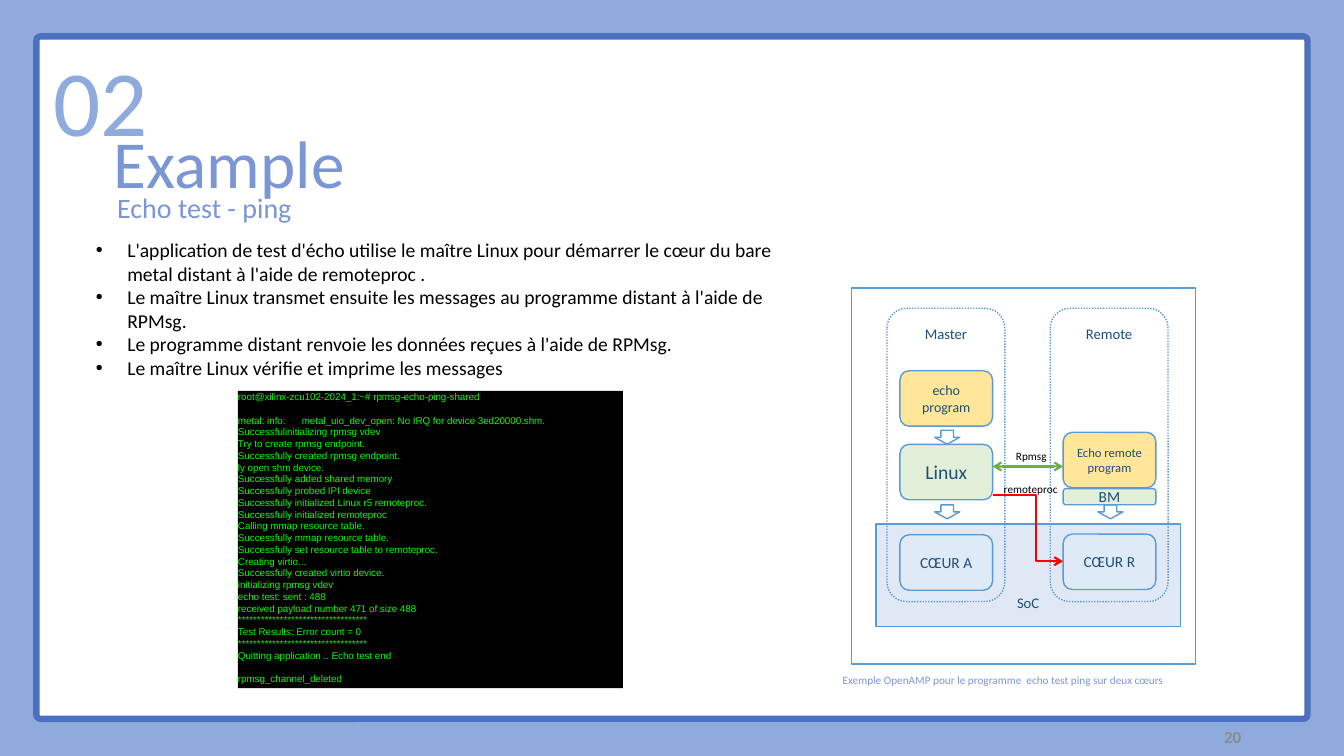
from collections import namedtuple
from dataclasses import dataclass

from lxml.etree import SubElement
from pptx import Presentation
from pptx.dml.color import RGBColor as Color
from pptx.enum.dml import MSO_LINE_DASH_STYLE as Dash
from pptx.enum.shapes import MSO_CONNECTOR as Link, MSO_SHAPE as Preset
from pptx.enum.text import MSO_ANCHOR as Anchor, MSO_AUTO_SIZE as AutoSize, PP_ALIGN as Align
from pptx.oxml.ns import qn
from pptx.util import Pt

Box = namedtuple("Box", "left top width height")
Style = namedtuple("Style", "size color name bold", defaults=("Calibri", False))


@dataclass(frozen=True)
class Theme:
    background: str = "8FAADC"
    frame: str = "4C6FBF"
    white: str = "FFFFFF"
    edge: str = "5B9BD5"
    soc: str = "4472C4"
    program: str = "FFE699"
    system: str = "E2F0D9"
    core: str = "DEEBF7"
    message: str = "70AD47"
    control: str = "FF0000"
    black: str = "000000"
    number: Style = Style(66.6, "8FAADC")
    title: Style = Style(48, "7B96D4")
    subtitle: Style = Style(20, "7B96D4")
    caption: Style = Style(8, "7B96D4")
    body: Style = Style(14, "000000")
    label: Style = Style(8, "000000")
    terminal: Style = Style(7, "00FF00", "Arial")
    page: Style = Style(12, "8B8B8B", "Calibri", True)

    def node(self, size):
        return Style(size, "1F4E79")


THEME = Theme()

BULLETS = [
    "L'application de test d'écho utilise le maître Linux pour démarrer le cœur du bare metal distant à l'aide de remoteproc .",
    "Le maître Linux transmet ensuite les messages au programme distant à l'aide de RPMsg.",
    "Le programme distant renvoie les données reçues à l'aide de RPMsg.",
    "Le maître Linux vérifie et imprime les messages",
]
STARS = "*" * 34
TERMINAL = f"""root@xilinx-zcu102-2024_1:~# rpmsg-echo-ping-shared

metal: info:      metal_uio_dev_open: No IRQ for device 3ed20000.shm.
Successfulinitializing rpmsg vdev
Try to create rpmsg endpoint.
Successfully created rpmsg endpoint.
ly open shm device.
Successfully added shared memory
Successfully probed IPI device
Successfully initialized Linux r5 remoteproc.
Successfully initialized remoteproc
Calling mmap resource table.
Successfully mmap resource table.
Successfully set resource table to remoteproc.
Creating virtio...
Successfully created virtio device.
initializing rpmsg vdev
echo test: sent : 488
received payload number 471 of size 488
{STARS}
Test Results: Error count = 0
{STARS}
Quitting application .. Echo test end

rpmsg_channel_deleted"""


def apply(target, **values):
    for name, value in values.items():
        setattr(target, name, value)


def place(shape, box):
    apply(shape, **{name: Pt(value) for name, value in box._asdict().items()})


def inside(box, left, top, width, height):
    return Box(box.left + left, box.top + top, width, height)


def write(shape, lines, style, margins=(0, 0, 0, 0), anchor=Anchor.TOP, wrap=True,
          align=Align.LEFT, spacing=1.0, bullet_indent=None):
    """Fill a shape with paragraphs; an empty line becomes space before the next one."""
    frame = shape.text_frame
    sides = ("margin_left", "margin_top", "margin_right", "margin_bottom")
    apply(frame, auto_size=AutoSize.NONE, word_wrap=wrap, vertical_anchor=anchor,
          **{side: Pt(margin) for side, margin in zip(sides, margins)})
    gap = 0
    for index, line in enumerate(lines):
        if not line:
            gap = style.size * 1.2
            continue
        paragraph = frame.add_paragraph() if index else frame.paragraphs[0]
        apply(paragraph, alignment=align, line_spacing=spacing, space_before=Pt(gap))
        gap = 0
        if bullet_indent:
            properties = paragraph._p.get_or_add_pPr()
            for name, value in {"marL": bullet_indent, "indent": -bullet_indent}.items():
                properties.set(name, str(Pt(value)))
            SubElement(properties, qn("a:buFont")).set("typeface", "Arial")
            SubElement(properties, qn("a:buChar")).set("char", "•")
        run = paragraph.add_run()
        run.text = line
        apply(run.font, name=style.name, size=Pt(style.size), bold=style.bold)
        run.font.color.rgb = Color.from_string(style.color)


def add_text(slide, box, text, style, **options):
    shape = slide.shapes.add_textbox(*map(Pt, box))
    write(shape, [text], style, **options)


def add_block(slide, preset, box, fill=None, edge=THEME.edge, width=1, dash=None):
    shape = slide.shapes.add_shape(preset, *map(Pt, box))
    shape.shadow.inherit = False
    if fill:
        shape.fill.solid()
        shape.fill.fore_color.rgb = Color.from_string(fill)
    else:
        shape.fill.background()
    if edge:
        shape.line.color.rgb = Color.from_string(edge)
        apply(shape.line, width=Pt(width), dash_style=dash)
    else:
        shape.line.fill.background()
    return shape


def add_arrow(slide, kind, start, end, color, ends):
    connector = slide.shapes.add_connector(kind, *map(Pt, (*start, *end)))
    connector.line.color.rgb = Color.from_string(color)
    connector.line.width = Pt(1.5)
    properties = connector._element.spPr
    for name in ends:
        SubElement(properties.find(qn("a:ln")), qn(f"a:{name}")).set("type", "arrow")
    SubElement(properties, qn("a:effectLst"))
    return connector


def build_frame(slide, box):
    slide.background.fill.solid()
    slide.background.fill.fore_color.rgb = Color.from_string(THEME.background)
    frame = add_block(slide, Preset.ROUNDED_RECTANGLE, box, THEME.white, THEME.frame, 4.5)
    frame.adjustments[0] = 0.006
    # The frame goes behind the placeholders
    slide.shapes.element.insert(2, frame.element)
    add_text(slide, inside(box, 800.5, 493, 60, 15), "20", THEME.page, align=Align.RIGHT)


def build_heading(slide, box):
    add_text(slide, inside(box, 0, 0, 91.4, 102), "02", THEME.number, align=Align.CENTER, spacing=1.27)
    title = slide.shapes.title
    place(title, inside(box, 55.4, 67, 775, 60))
    write(title, ["Example"], THEME.title, spacing=1.18)
    add_text(slide, inside(box, 57.6, 124.2, 361, 27), "Echo test - ping", THEME.subtitle, spacing=1.11)


def build_bullets(slide, box):
    body = slide.placeholders[1]
    place(body, box)
    write(body, BULLETS, THEME.body, margins=(7.2, 3.6, 7.2, 3.6), bullet_indent=22.5)


def build_terminal(slide, box):
    terminal = add_block(slide, Preset.RECTANGLE, box, THEME.black, edge=None)
    write(terminal, TERMINAL.split("\n"), THEME.terminal)


def build_diagram(slide, box):
    add_block(slide, Preset.RECTANGLE, box)
    # System on chip, translucent
    soc = add_block(slide, Preset.RECTANGLE, inside(box, 17.3, 168.5, 217.4, 73.4), THEME.soc)
    tint = soc._element.spPr.find(qn("a:solidFill"))[0]
    SubElement(tint, qn("a:alpha")).set("val", "16000")
    write(soc, ["SoC"], THEME.node(10.5), (0, 0, 0, 11), Anchor.BOTTOM, align=Align.CENTER)
    # Each column: name, left, down arrow tops, nodes (text, top, height, size, fill)
    columns = [
        ("Master", 25.2, (101.5, 154.8), [
            ("echo program", 59, 39.6, 10, THEME.program),
            ("Linux", 111.6, 39.6, 14, THEME.system),
            ("CŒUR A", 176.2, 39.6, 11, THEME.core)]),
        ("Remote", 141.8, (154.8,), [
            ("Echo remote program", 103, 39.6, 9, THEME.program),
            ("CŒUR R", 175.7, 39.6, 11, THEME.core),
            ("BM", 143.3, 11.5, 11, THEME.system)]),
    ]
    for name, left, arrow_tops, nodes in columns:
        column = add_block(slide, Preset.ROUNDED_RECTANGLE, inside(box, left, 14.4, 84.2, 209.5),
                           dash=Dash.ROUND_DOT)
        write(column, [name], THEME.node(10.5), (0, 7.5, 0, 0), align=Align.CENTER)
        for top in arrow_tops:
            add_block(slide, Preset.DOWN_ARROW, inside(box, left + 34, top, 18, 10), THEME.white)
        for text, top, height, size, fill in nodes:
            node = add_block(slide, Preset.ROUNDED_RECTANGLE,
                             inside(box, left + 9.2, top, 66.2, height), fill)
            write(node, [text], THEME.node(size), (7.2, 0, 7.2, 0), Anchor.MIDDLE, align=Align.CENTER)
    # Links between the columns
    start, end = box.left + 100.6, box.left + 151
    add_arrow(slide, Link.STRAIGHT, (start, box.top + 127.4), (end, box.top + 127.4),
              THEME.message, ("headEnd", "tailEnd"))
    bent = add_arrow(slide, Link.ELBOW, (start, box.top + 147.6), (end, box.top + 195.1),
                     THEME.control, ("tailEnd",))
    guide = SubElement(bent._element.spPr.find(qn("a:prstGeom")).find(qn("a:avLst")), qn("a:gd"))
    for name, value in {"name": "adj1", "fmla": "val 61600"}.items():
        guide.set(name, value)
    for text, left, top in (("Rpmsg", 110.2, 111.6), ("remoteproc", 101.5, 135)):
        add_text(slide, inside(box, left, top, 53, 17), text, THEME.label,
                 margins=(7.2, 3.6, 7.2, 3.6), wrap=False)
    add_text(slide, inside(box, -6.5, 274.3, 258.5, 11),
             "Exemple OpenAMP pour le programme  echo test ping sur deux cœurs", THEME.caption, spacing=1.11)


def main():
    presentation = Presentation()
    apply(presentation, slide_width=Pt(960), slide_height=Pt(540))
    slide = presentation.slides.add_slide(presentation.slide_layouts[1])
    build_frame(slide, Box(26, 26, 908, 487.5))
    build_heading(slide, Box(26, 9.4, 830, 152))
    build_bullets(slide, Box(61.2, 166.3, 515.5, 126))
    build_terminal(slide, Box(170, 279.2, 275, 212.4))
    build_diagram(slide, Box(608.4, 205.8, 245.5, 268.5))
    presentation.save("out.pptx")


if __name__ == "__main__":
    main()
